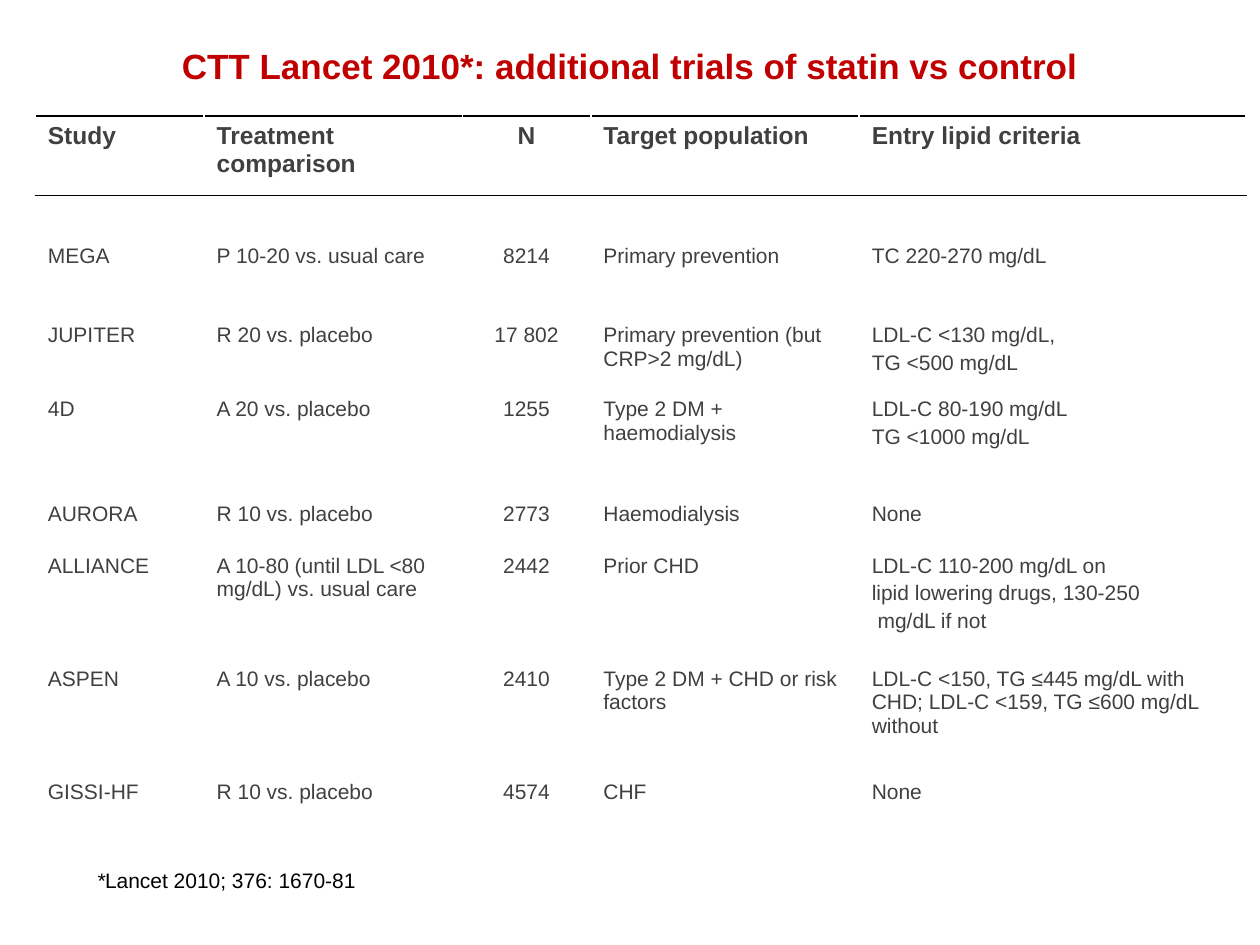
"""Build a slide that tabulates additional trials of statin versus control."""
from dataclasses import dataclass

from lxml.etree import SubElement
from pptx import Presentation
from pptx.dml.color import RGBColor
from pptx.enum.text import MSO_ANCHOR as Anchor, MSO_AUTO_SIZE as AutoSize, PP_ALIGN as Align
from pptx.oxml.ns import qn
from pptx.slide import Slide
from pptx.util import Inches, Pt

RED = RGBColor(0xC0, 0x00, 0x00)
GREY = RGBColor(0x40, 0x40, 0x40)
BLACK = RGBColor(0x00, 0x00, 0x00)
WHITE = RGBColor(0xFF, 0xFF, 0xFF)

COLUMN_WIDTHS = [1.34, 2.05, 1.02, 2.13, 3.07]
ROW_HEIGHTS = [0.63, 0.15, 0.63, 0.59, 0.83, 0.41, 0.9, 0.9, 0.41]
COUNT_COLUMN = 2
HEADINGS = ["Study", "Treatment comparison", "N", "Target population", "Entry lipid criteria"]
TRIALS = [
    ["MEGA", "P 10-20 vs. usual care", "8214", "Primary prevention", "TC 220-270 mg/dL"],
    ["JUPITER", "R 20 vs. placebo", "17 802", "Primary prevention (but CRP>2 mg/dL)",
     "LDL-C <130 mg/dL,\nTG <500 mg/dL"],
    ["4D", "A 20 vs. placebo", "1255", "Type 2 DM + haemodialysis",
     "LDL-C 80-190 mg/dL\nTG <1000 mg/dL"],
    ["AURORA", "R 10 vs. placebo", "2773", "Haemodialysis", "None"],
    ["ALLIANCE", "A 10-80 (until LDL <80 mg/dL) vs. usual care", "2442", "Prior CHD",
     "LDL-C 110-200 mg/dL on\nlipid lowering drugs, 130-250\n mg/dL if not"],
    ["ASPEN", "A 10 vs. placebo", "2410", "Type 2 DM + CHD or risk factors",
     "LDL-C <150, TG ≤445 mg/dL with CHD; LDL-C <159, TG ≤600 mg/dL without"],
    ["GISSI-HF", "R 10 vs. placebo", "4574", "CHF", "None"],
]
SPACER = [""] * len(HEADINGS)
ROW_BORDERS = {
    0: {"a:lnT": (BLACK, 1), "a:lnB": (BLACK, 1)},
    1: {"a:lnT": (BLACK, 1), "a:lnB": (WHITE, 1.5)},
    2: {"a:lnT": (WHITE, 1.5)},
}


@dataclass
class TrialSlide:
    """Hold the typeface and the current slide."""
    page: Slide
    typeface: str = "Arial"

    def span(self, para, text, color, **values):
        """Add a formatted run to a paragraph."""
        span = para.add_run()
        span.text = text
        for name, value in {"name": self.typeface, **values}.items():
            setattr(span.font, name, value)
        span.font.color.rgb = color

    def place(self, box, left, top, width, height):
        """Move and size a shape in inches."""
        for name, value in zip(("left", "top", "width", "height"), (left, top, width, height)):
            setattr(box, name, Inches(value))

    def title(self, text, *area):
        """Fill the title placeholder."""
        box = self.page.shapes.title
        self.place(box, *area)
        frame = box.text_frame
        for name, value in {"vertical_anchor": Anchor.TOP, "auto_size": AutoSize.NONE,
                            "word_wrap": True}.items():
            setattr(frame, name, value)
        para = frame.paragraphs[0]
        para.alignment = Align.CENTER
        self.span(para, text, RED, size=Pt(20), bold=True)

    def border(self, cell, tag, color, width):
        """Draw one edge of a cell."""
        line = SubElement(cell._tc.get_or_add_tcPr(), qn(tag), w=str(Pt(width)))
        fill = SubElement(line, qn("a:solidFill"))
        SubElement(fill, qn("a:srgbClr"), val=str(color))

    def cell(self, cell, text, centred, borders, **values):
        """Fill one table cell, one paragraph per line of text."""
        for tag, (color, width) in borders.items():
            self.border(cell, tag, color, width)
        cell.fill.background()
        frame = cell.text_frame
        for index, line in enumerate(text.split("\n")):
            para = frame.add_paragraph() if index else frame.paragraphs[0]
            para.alignment = Align.CENTER if centred else Align.LEFT
            if index:
                para.space_before = Pt(2.4)
            if line:
                self.span(para, line, GREY, **values)
            else:
                SubElement(para._p, qn("a:endParaRPr"), sz=str(int(values["size"].pt * 100)))

    def table(self, rows, left, top):
        """Add the trial table."""
        size = Inches(sum(COLUMN_WIDTHS)), Inches(sum(ROW_HEIGHTS))
        table = self.page.shapes.add_table(
            len(rows), len(COLUMN_WIDTHS), Inches(left), Inches(top), *size).table
        table.first_row = table.horz_banding = False
        for column, width in zip(table.columns, COLUMN_WIDTHS):
            column.width = Inches(width)
        for r, (row, height, texts) in enumerate(zip(table.rows, ROW_HEIGHTS, rows)):
            row.height = Inches(height)
            for c, text in enumerate(texts):
                self.cell(table.cell(r, c), text, c == COUNT_COLUMN, ROW_BORDERS.get(r, {}),
                          size=Pt(14 if r < 2 else 12), bold=r == 0)

    def footnote(self, mark, text, *area):
        """Add the citation with its italic mark."""
        box = self.page.shapes.add_textbox(*map(Inches, area))
        frame = box.text_frame
        frame.word_wrap = True
        frame.auto_size = AutoSize.SHAPE_TO_FIT_TEXT
        for part, italic in ((mark, True), (text, False)):
            self.span(frame.paragraphs[0], part, BLACK, size=Pt(12), italic=italic)


def main():
    """Build and save the deck."""
    deck = Presentation()
    deck.slide_width, deck.slide_height = Inches(10), Inches(7.5)
    slide = TrialSlide(deck.slides.add_slide(deck.slide_layouts[5]))
    slide.title("CTT Lancet 2010*: additional trials of statin vs control", 0.5, 0.3, 9, 0.62)
    slide.table([HEADINGS, SPACER, *TRIALS], 0.28, 0.92)
    slide.footnote("*", "Lancet 2010; 376: 1670-81", 0.67, 6.84, 5.28, 0.3)
    deck.save("out.pptx")


if __name__ == "__main__":
    main()
